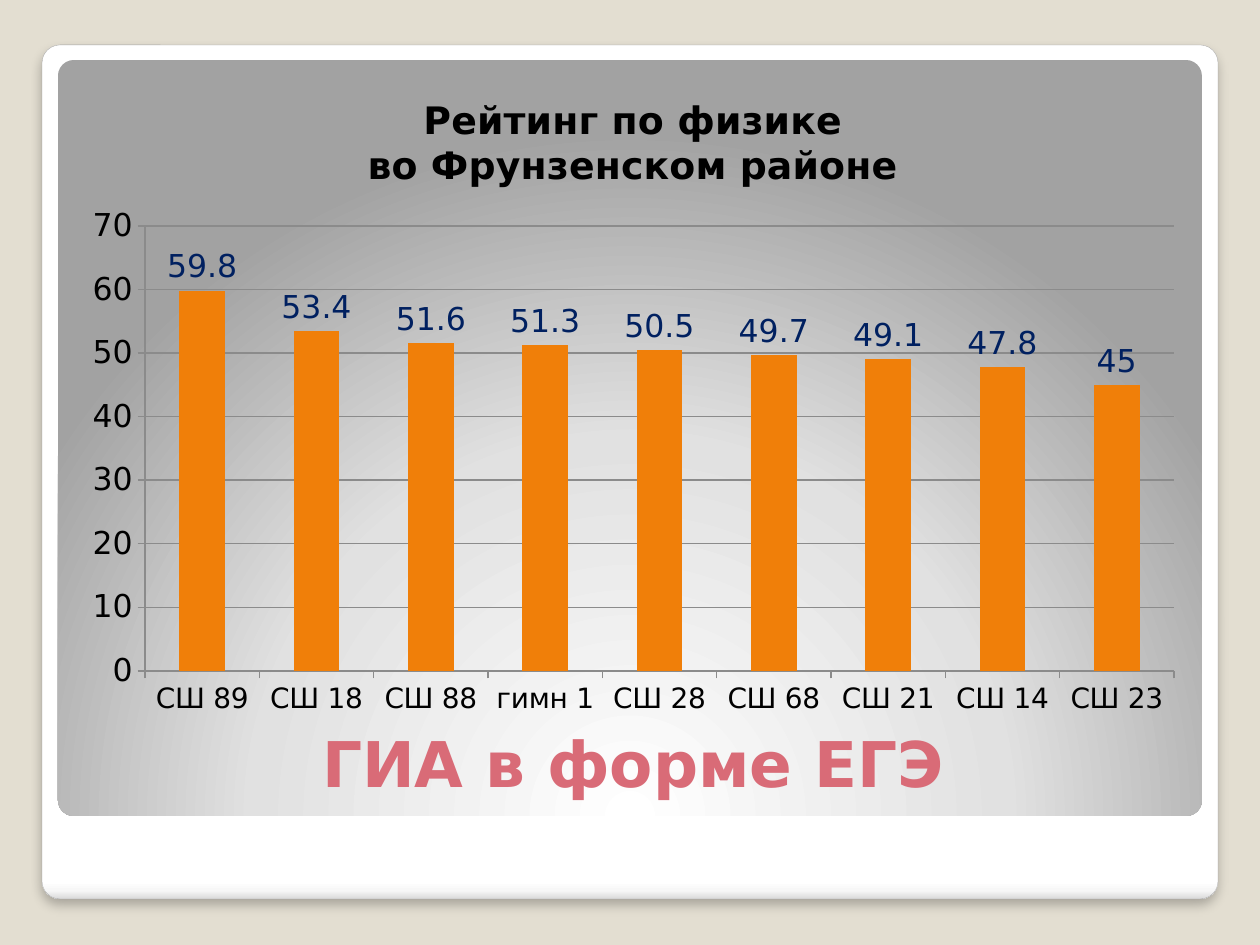
from dataclasses import dataclass

from pptx import Presentation
from pptx.chart.data import CategoryChartData
from pptx.dml.color import RGBColor
from pptx.enum.chart import XL_CHART_TYPE, XL_LABEL_POSITION, XL_TICK_MARK
from pptx.enum.shapes import MSO_SHAPE
from pptx.enum.text import MSO_ANCHOR, PP_ALIGN
from pptx.oxml import parse_xml
from pptx.oxml.ns import nsdecls, qn
from pptx.util import Pt

PX = 914400 / 126
ROUNDED = MSO_SHAPE.ROUNDED_RECTANGLE
COLUMNS = XL_CHART_TYPE.COLUMN_CLUSTERED
LABEL_ABOVE = XL_LABEL_POSITION.OUTSIDE_END
TICK_OUT = XL_TICK_MARK.OUTSIDE
CENTER = PP_ALIGN.CENTER
BOTTOM = MSO_ANCHOR.BOTTOM

LINEAR_DOWN = '<a:lin ang="5400000" scaled="0"/>'
GLOW_FROM_BELOW = ('<a:path path="circle"><a:fillToRect l="50000" t="175000" '
                   'r="50000" b="-75000"/></a:path>')
SHADOW = (f'<a:outerShdw {nsdecls("a")} blurRad="76200" dist="50800" dir="5400000" '
          'algn="t" rotWithShape="0"><a:srgbClr val="000000">'
          '<a:alpha val="25000"/></a:srgbClr></a:outerShdw>')

SCORES = {
    "СШ 89": 59.8, "СШ 18": 53.4, "СШ 88": 51.6,
    "гимн 1": 51.3, "СШ 28": 50.5, "СШ 68": 49.7,
    "СШ 21": 49.1, "СШ 14": 47.8, "СШ 23": 45,
}


@dataclass(frozen=True)
class Theme:
    font: str = "DejaVu Sans"
    background: str = "E3DED1"
    border: str = "A4A4A4"
    title: str = "D96B77"
    text: str = "000000"
    label: str = "002060"
    bar: str = "F07F09"
    grid: str = "8B8B8B"
    frame_stops: tuple = ((0, "FFFFFF"), (98, "FFFFFF"), (99, "F7F7F7"), (100, "DADADA"))
    panel_stops: tuple = ((0, "FFFFFF"), (55, "E1E1E1"), (100, "A2A2A2"))
    title_size: float = 36
    chart_title_size: float = 21.6
    chart_size: float = 18
    category_size: float = 16


def px(*lengths):
    return [round(n * PX) for n in lengths]


def rgb(value):
    return RGBColor.from_string(value)


class SlideBuilder:
    def __init__(self, prs, theme):
        self.theme = theme
        self.slide = prs.slides.add_slide(prs.slide_layouts[5])
        fill = self.slide.background.fill
        fill.solid()
        fill.fore_color.rgb = rgb(theme.background)

    def style(self, font, size, color, bold=False):
        font.name = self.theme.font
        font.size = Pt(size)
        font.bold = bold
        font.color.rgb = rgb(color)

    def panel(self, box, stops, direction, border=None, shadow=False):
        sp = self.slide.shapes.add_shape(ROUNDED, *px(*box))
        sp.adjustments[0] = 0.021
        sp.shadow.inherit = False
        sp.fill.background()
        if border:
            sp.line.color.rgb = rgb(border)
            sp.line.width = Pt(0.16)
        else:
            sp.line.fill.background()
        props = sp._element.spPr
        stop_xml = "".join(f'<a:gs pos="{pos * 1000}"><a:srgbClr val="{color}"/></a:gs>'
                           for pos, color in stops)
        gradient = parse_xml(f'<a:gradFill {nsdecls("a")} rotWithShape="1">'
                             f'<a:gsLst>{stop_xml}</a:gsLst>{direction}</a:gradFill>')
        props.replace(props.find(qn("a:noFill")), gradient)
        if shadow:
            props.find(qn("a:effectLst")).append(parse_xml(SHADOW))

    def title(self, box, text):
        sp = self.slide.shapes.title
        sp.left, sp.top, sp.width, sp.height = px(*box)
        self.slide.shapes._spTree.append(sp._element)  # in front of the panels
        tf = sp.text_frame
        tf.text = text
        tf.vertical_anchor = BOTTOM
        p = tf.paragraphs[0]
        p.alignment = CENTER
        self.style(p.runs[0].font, self.theme.title_size, self.theme.title, True)

    def axis(self, axis, size):
        axis.major_tick_mark = TICK_OUT
        axis.format.line.color.rgb = rgb(self.theme.grid)
        self.style(axis.tick_labels.font, size, self.theme.text)

    def column_chart(self, box, heading, scores, plot_box):
        theme = self.theme
        data = CategoryChartData()
        data.categories = list(scores)
        data.add_series("Series 1", list(scores.values()))
        chart = self.slide.shapes.add_chart(COLUMNS, *px(*box), data).chart
        self.style(chart.font, theme.chart_size, theme.text)
        chart.has_legend = False
        chart.has_title = True
        tf = chart.chart_title.text_frame
        tf.text = heading
        for p in tf.paragraphs:
            self.style(p.runs[0].font, theme.chart_title_size, theme.text, True)

        self.axis(chart.category_axis, theme.category_size)
        values = chart.value_axis
        self.axis(values, theme.chart_size)
        values.minimum_scale, values.maximum_scale, values.major_unit = 0, 70, 10
        values.has_major_gridlines = True
        values.major_gridlines.format.line.color.rgb = rgb(theme.grid)

        plot = chart.plots[0]
        plot.gap_width = 150
        plot.vary_by_categories = False
        fill = plot.series[0].format.fill
        fill.solid()
        fill.fore_color.rgb = rgb(theme.bar)
        plot.has_data_labels = True
        labels = plot.data_labels
        labels.show_value = True
        labels.position = LABEL_ABOVE
        self.style(labels.font, theme.chart_size, theme.label)
        self.place_plot(chart, box, plot_box)

    def place_plot(self, chart, box, plot_box):
        """Fix the area inside the axes, given in slide px."""
        x, y, w, h = box
        left, top, width, height = plot_box
        shares = {"x": (left - x) / w, "y": (top - y) / h, "w": width / w, "h": height / h}
        modes = "".join(f'<c:{k}Mode val="edge"/>' for k in "xy")
        sizes = "".join(f'<c:{k} val="{v:.4f}"/>' for k, v in shares.items())
        area = chart._chartSpace.chart.plotArea
        old = area.find(qn("c:layout"))
        if old is not None:
            area.remove(old)
        area.insert(0, parse_xml(
            f'<c:layout {nsdecls("c")}><c:manualLayout><c:layoutTarget val="inner"/>'
            f'{modes}{sizes}</c:manualLayout></c:layout>'))


def main():
    prs = Presentation()
    prs.slide_width, prs.slide_height = px(1260, 945)
    theme = Theme()
    s = SlideBuilder(prs, theme)
    s.panel((42, 45, 1176, 854), theme.frame_stops, LINEAR_DOWN, theme.border, shadow=True)
    s.panel((58, 60, 1144, 756), theme.panel_stops, GLOW_FROM_BELOW)
    s.title((69, 659, 1128, 147), "ГИА в форме ЕГЭ")
    s.column_chart((69, 73, 1128, 655), "Рейтинг по физике\nво Фрунзенском районе",
                   SCORES, (145, 226, 1029, 445))
    prs.save("out.pptx")


if __name__ == "__main__":
    main()
